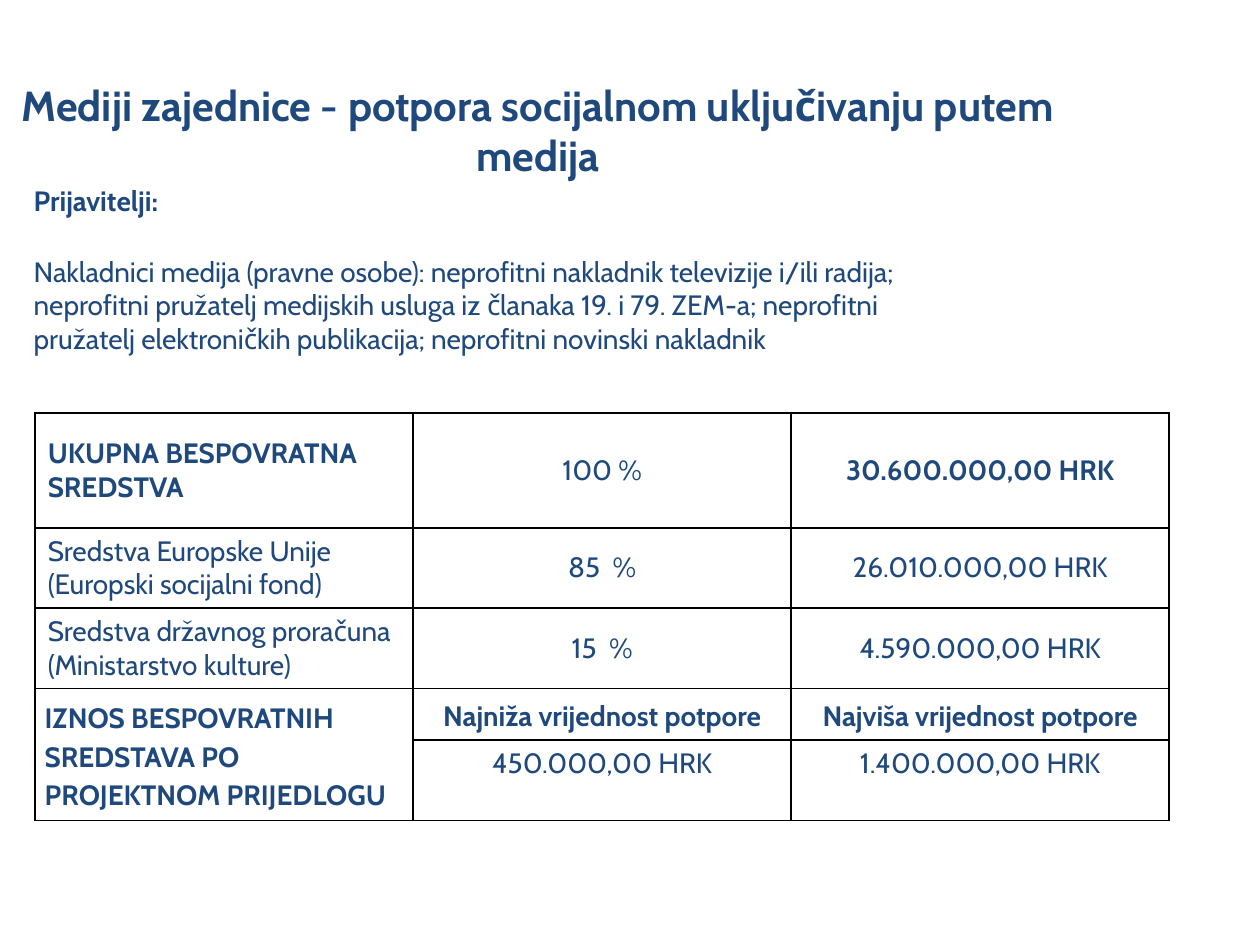
from lxml import etree
from pptx import Presentation
from pptx.dml.color import RGBColor
from pptx.enum.text import MSO_ANCHOR, MSO_AUTO_SIZE, PP_ALIGN
from pptx.oxml.ns import qn
from pptx.util import Cm, Pt

NAVY = RGBColor(0x1F, 0x49, 0x7D)
BLACK = RGBColor(0, 0, 0)
FONT = "Cabin"
LEFT, CENTER = PP_ALIGN.LEFT, PP_ALIGN.CENTER
TOP, MIDDLE = MSO_ANCHOR.TOP, MSO_ANCHOR.MIDDLE
NO_AUTOFIT = MSO_AUTO_SIZE.NONE
TITLE_ONLY = 5


def format_para(para, size, bold, align):
    para.alignment = align
    for span in para.runs:
        span.font.name = FONT
        span.font.size = Pt(size)
        span.font.bold = bold
        span.font.color.rgb = NAVY


def add_borders(cell):
    properties = cell._tc.get_or_add_tcPr()
    for position, side in enumerate(("lnL", "lnR", "lnT", "lnB")):
        line = etree.Element(qn(f"a:{side}"), w=str(Pt(1)))
        fill = etree.SubElement(line, qn("a:solidFill"))
        etree.SubElement(fill, qn("a:srgbClr"), val=str(BLACK))
        properties.insert(position, line)


deck = Presentation()
deck.slide_width, deck.slide_height = Cm(25.4), Cm(19.05)
page = deck.slides.add_slide(deck.slide_layouts[TITLE_ONLY])

# Title
title = page.shapes.title
title.left, title.top, title.width, title.height = Cm(-0.4), Cm(1.02), Cm(22.48), Cm(3.18)
title.text_frame.text = "Mediji zajednice - potpora socijalnom uključivanju putem medija"
title.text_frame.auto_size = NO_AUTOFIT
title.text_frame.vertical_anchor = MIDDLE
format_para(title.text_frame.paragraphs[0], 24, True, CENTER)

# Funding table: text and bold flag for each cell
ROWS = [
    [("UKUPNA BESPOVRATNA SREDSTVA", True), ("100 %", False), ("30.600.000,00 HRK", True)],
    [("Sredstva Europske Unije\n(Europski socijalni fond)", False),
     ("85  %", False), ("26.010.000,00 HRK", False)],
    [("Sredstva državnog proračuna\n(Ministarstvo kulture)", False),
     ("15  %", False), ("4.590.000,00 HRK", False)],
    [("IZNOS BESPOVRATNIH SREDSTAVA PO PROJEKTNOM PRIJEDLOGU", True),
     ("Najniža vrijednost potpore", True), ("Najviša vrijednost potpore", True)],
    [("", False), ("450.000,00 HRK", False), ("1.400.000,00 HRK", False)],
]
ROW_HEIGHTS = [2.31, 1.62, 1.62, 1.04, 1.62]
HEADING_ROW, AMOUNT_ROW = 3, 4

table = page.shapes.add_table(
    len(ROWS), 3, Cm(0.71), Cm(8.33), Cm(22.86), Cm(sum(ROW_HEIGHTS))).table
table.first_row = table.horz_banding = False
for column in table.columns:
    column.width = Cm(7.62)

for row_index, (cells, height) in enumerate(zip(ROWS, ROW_HEIGHTS)):
    table.rows[row_index].height = Cm(height)
    for column_index, (text, bold) in enumerate(cells):
        cell = table.cell(row_index, column_index)
        cell.text = text
        cell.fill.background()
        add_borders(cell)
        cell.vertical_anchor = TOP if row_index == AMOUNT_ROW else MIDDLE
        if row_index == HEADING_ROW:
            cell.margin_left = cell.margin_right = Cm(0.19)
            cell.margin_top = cell.margin_bottom = Cm(0)
        for para in cell.text_frame.paragraphs:
            format_para(para, 16, bold, CENTER if column_index else LEFT)
            if row_index == HEADING_ROW:
                para.line_spacing = 1.15

table.cell(HEADING_ROW, 0).merge(table.cell(AMOUNT_ROW, 0))

# Applicants
box = page.shapes.add_textbox(Cm(0.43), Cm(3.58), Cm(18.49), Cm(5.21))
frame = box.text_frame
frame.word_wrap = True
frame.text = (
    "Prijavitelji:\n"
    "Nakladnici medija (pravne osobe): neprofitni nakladnik televizije i/ili radija; "
    "neprofitni pružatelj medijskih usluga iz članaka 19. i 79. ZEM-a; "
    "neprofitni pružatelj elektroničkih publikacija; neprofitni novinski nakladnik"
)
heading, description = frame.paragraphs
format_para(heading, 16, True, LEFT)
format_para(description, 16, False, LEFT)
description.space_before = Pt(21)

deck.save("out.pptx")
